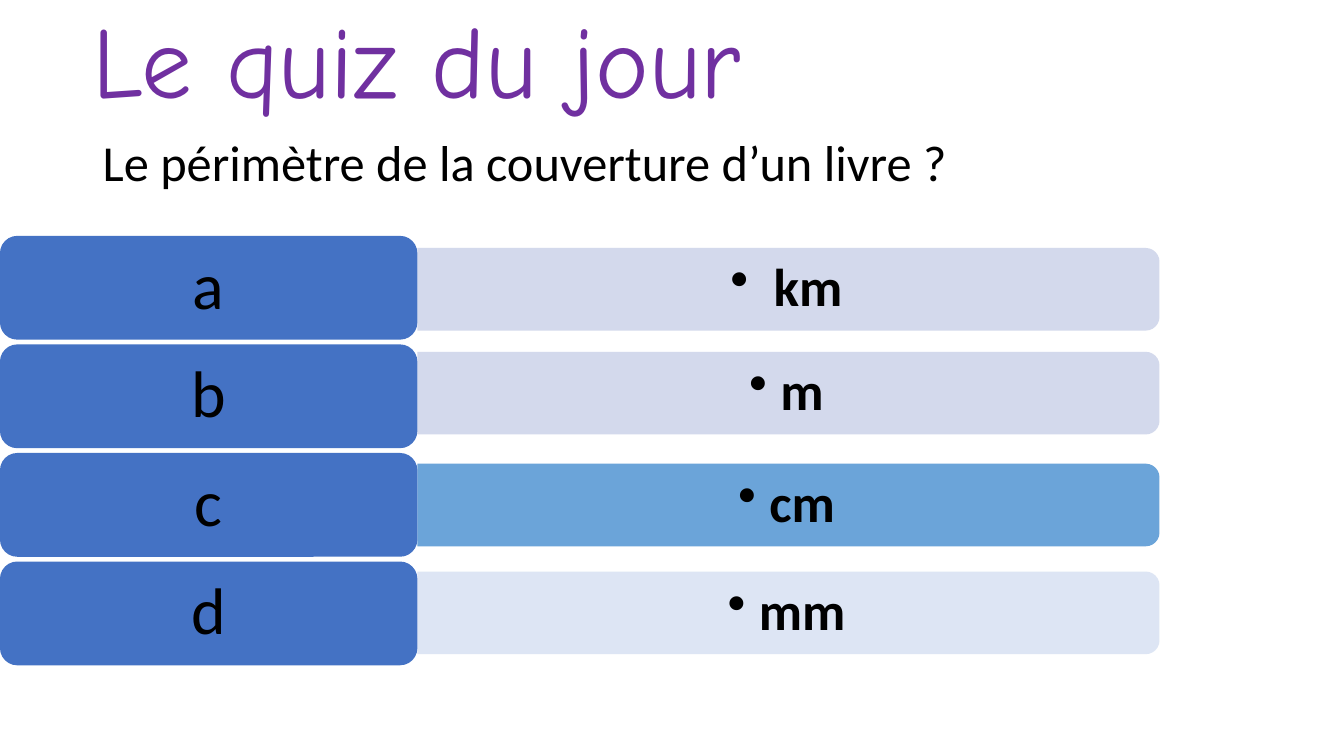
"""Build the quiz-of-the-day slide: a question with four lettered answers."""
import pptx
import pptx.dml.color
import pptx.enum.shapes
import pptx.enum.text
import pptx.oxml
import pptx.oxml.ns
import pptx.util
from pptx.dml.color import RGBColor

Inches = pptx.util.Inches
Shape = pptx.enum.shapes.MSO_SHAPE
Align = pptx.enum.text.PP_ALIGN
Anchor = pptx.enum.text.MSO_ANCHOR

PURPLE = RGBColor(0x70, 0x30, 0xA0)
BLACK = RGBColor(0x00, 0x00, 0x00)
BLUE = RGBColor(0x44, 0x72, 0xC4)
LAVENDER = RGBColor(0xCF, 0xD5, 0xEA)
SKY = RGBColor(0x5B, 0x9B, 0xD5)
PALE = RGBColor(0xDA, 0xE3, 0xF3)

TITLE = "Le quiz du jour"
QUESTION = "Le périmètre de la couverture d’un livre ?"
ANSWERS = [
    ("a", " km", LAVENDER, 2.87),
    ("b", "m", LAVENDER, 3.9),
    ("c", "cm", SKY, 5.01),
    ("d", "mm", PALE, 6.08),
]

TITLE_FONT = {"name": "Comic Neue", "size": 72.5, "color": PURPLE}
QUESTION_FONT = {"name": "Calibri", "size": 36, "color": BLACK}
LETTER_FONT = {"name": "Calibri", "size": 47, "color": BLACK}
UNIT_FONT = {"name": "Calibri", "size": 38, "color": BLACK, "bold": True}

FIRST_TOP, ROW_STEP = 2.34, 1.077
LETTER_WIDTH, LETTER_HEIGHT = 4.14, 1.03
BAR_LENGTH, BAR_HEIGHT = 7.36, 0.82
UNIT_WIDTH, UNIT_HEIGHT = 7.32, 0.74


def write(box, text, font, insets, align=Align.LEFT, spacing=0.9, anchor=Anchor.MIDDLE):
    """Fill a box with one formatted paragraph and return it."""
    frame = box.text_frame
    frame.word_wrap = True
    frame.vertical_anchor = anchor
    for side, inset in zip(("left", "top", "right", "bottom"), insets):
        setattr(frame, f"margin_{side}", Inches(inset))
    para = frame.paragraphs[0]
    para.alignment = align
    para.line_spacing = spacing
    span = para.add_run()
    span.text = text
    for key, value in font.items():
        if key == "color":
            span.font.color.rgb = value
        else:
            setattr(span.font, key, pptx.util.Pt(value) if key == "size" else value)
    return para


def add_text_box(page, left, top, width, height):
    """Add an empty text box measured in inches."""
    return page.shapes.add_textbox(*map(Inches, (left, top, width, height)))


def add_block(page, kind, left, top, width, height, color):
    """Add a borderless filled shape measured in inches."""
    block = page.shapes.add_shape(kind, *map(Inches, (left, top, width, height)))
    block.shadow.inherit = False
    block.fill.solid()
    block.fill.fore_color.rgb = color
    block.line.fill.background()
    return block


def add_bar(page, center, color):
    """Add a see-through answer bar, turned so its round end points right."""
    left = LETTER_WIDTH + (BAR_LENGTH - BAR_HEIGHT) / 2
    bar = add_block(page, Shape.ROUND_2_SAME_RECTANGLE, left, center - BAR_LENGTH / 2,
                    BAR_HEIGHT, BAR_LENGTH, color)
    bar.rotation = 90
    tint = bar.fill._xPr.find(".//" + pptx.oxml.ns.qn("a:srgbClr"))
    pptx.oxml.ns.qn("a:alpha")
    tint.append(pptx.oxml.parse_xml(
        f'<a:alpha {pptx.oxml.ns.nsdecls("a")} val="90000"/>'))


def add_bullet(para):
    """Give a paragraph a round bullet with a hanging indent."""
    properties = para._p.get_or_add_pPr()
    properties.set("marL", str(Inches(0.31)))
    properties.set("indent", str(Inches(-0.31)))
    properties.append(pptx.oxml.parse_xml(
        f'<a:buChar {pptx.oxml.ns.nsdecls("a")} char="•"/>'))


def main():
    """Lay out the slide and save it."""
    deck = pptx.Presentation()
    deck.slide_width, deck.slide_height = Inches(13.33), Inches(7.5)
    page = deck.slides.add_slide(deck.slide_layouts[6])

    write(add_text_box(page, 0.92, 0.27, 11.5, 1.15), TITLE, TITLE_FONT, (0, 0, 0, 0.38))

    for row, (letter, unit, color, center) in enumerate(ANSWERS):
        add_bar(page, center, color)
        unit_box = add_text_box(page, LETTER_WIDTH, center - UNIT_HEIGHT / 2,
                                UNIT_WIDTH, UNIT_HEIGHT)
        add_bullet(write(unit_box, unit, UNIT_FONT, (0.16, 0.08, 0.16, 0.08), Align.CENTER))
        block = add_block(page, Shape.ROUNDED_RECTANGLE, 0, FIRST_TOP + row * ROW_STEP,
                          LETTER_WIDTH, LETTER_HEIGHT, BLUE)
        write(block, letter, LETTER_FONT, (0.2, 0.1, 0.2, 0.1), Align.CENTER)

    write(add_text_box(page, 0.92, 1.25, 8.84, 0.71), QUESTION, QUESTION_FONT,
          (0.1, 0.05, 0.1, 0.05), spacing=1.0, anchor=Anchor.TOP)
    deck.save("out.pptx")


if __name__ == "__main__":
    main()
